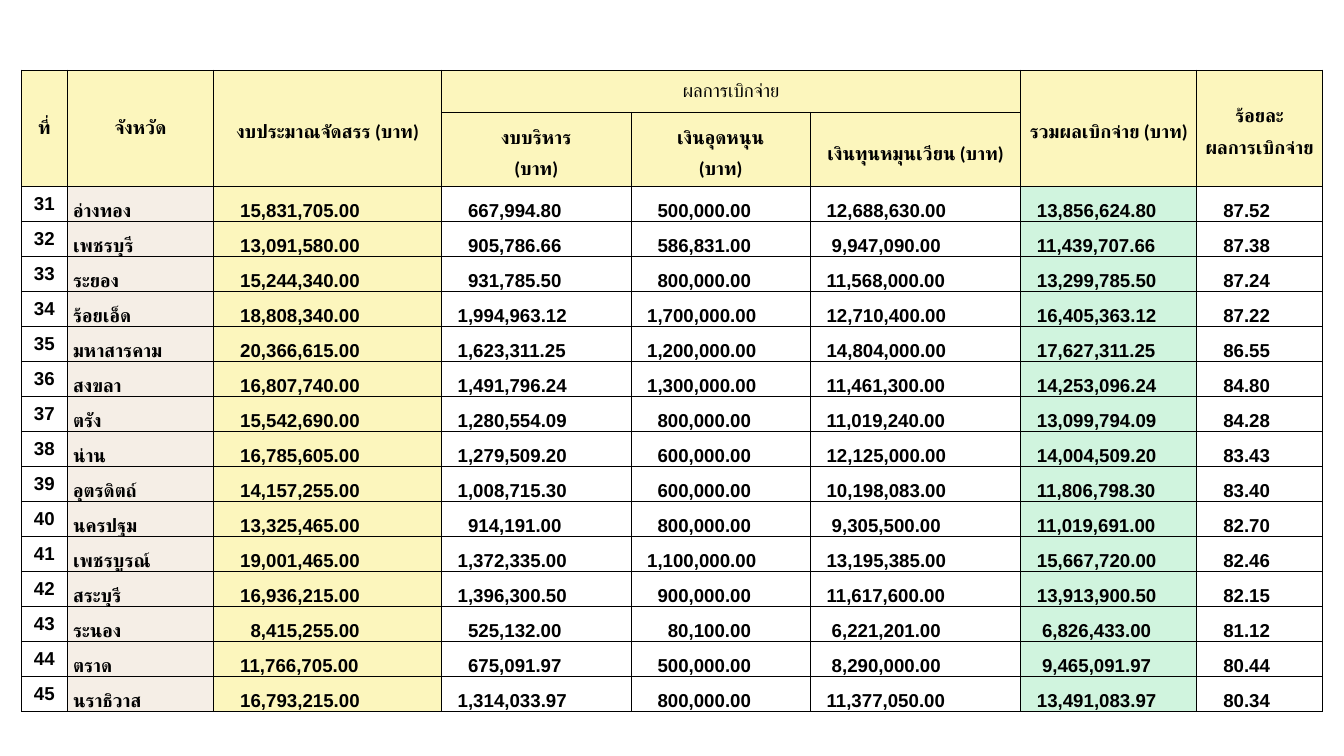
from lxml import etree
from pptx import Presentation
from pptx import util as u
from pptx.dml import color
from pptx.enum import text
from pptx.oxml import ns

INK = {"text": "000000", "line": "000000", "head": "FCF6BD", "name": "F5EEE6", "sum": "D0F4DE"}
COLS = [0.68, 2.18, 3.39, 2.82, 2.67, 3.13, 2.62, 1.87]
HEADS = [0.63, 1.1]
SPACE = 0.077
THIN = {(0, 6): "R", (1, 6): "RB", (0, 7): "L", (1, 7): "L", (2, 6): "T"}
FILLS = {1: "name", 2: "head", 6: "sum"}
GAPS = {
    2: {13: 5, 12: 7},
    3: {12: 3, 10: 5},
    4: {12: 3, 10: 5, 9: 7},
    5: {13: 3, 12: 4},
    6: {13: 3, 12: 4},
    7: {5: 5},
}
TITLES = [
    (0, 0, 1, 0, 24, True, ["ที่"]),
    (0, 1, 1, 1, 24, True, ["จังหวัด"]),
    (0, 2, 1, 2, 34, True, ["งบประมาณจัดสรร (บาท)"]),
    (0, 3, 0, 5, 24, False, ["ผลการเบิกจ่าย"]),
    (0, 6, 1, 6, 34, True, ["รวมผลเบิกจ่าย (บาท)"]),
    (0, 7, 1, 7, 34, True, ["ร้อยละ", "ผลการเบิกจ่าย"]),
    (1, 3, 1, 3, 34, True, ["งบบริหาร", "(บาท)"]),
    (1, 4, 1, 4, 34, True, ["เงินอุดหนุน", "(บาท)"]),
    (1, 5, 1, 5, 34, True, ["เงินทุนหมุนเวียน (บาท)"]),
]
FIRST = 31
DATA = [
    ("อ่างทอง", "15,831,705.00", "667,994.80", "500,000.00", "12,688,630.00", "13,856,624.80", "87.52"),
    ("เพชรบุรี", "13,091,580.00", "905,786.66", "586,831.00", "9,947,090.00", "11,439,707.66", "87.38"),
    ("ระยอง", "15,244,340.00", "931,785.50", "800,000.00", "11,568,000.00", "13,299,785.50", "87.24"),
    ("ร้อยเอ็ด", "18,808,340.00", "1,994,963.12", "1,700,000.00", "12,710,400.00", "16,405,363.12", "87.22"),
    ("มหาสารคาม", "20,366,615.00", "1,623,311.25", "1,200,000.00", "14,804,000.00", "17,627,311.25", "86.55"),
    ("สงขลา", "16,807,740.00", "1,491,796.24", "1,300,000.00", "11,461,300.00", "14,253,096.24", "84.80"),
    ("ตรัง", "15,542,690.00", "1,280,554.09", "800,000.00", "11,019,240.00", "13,099,794.09", "84.28"),
    ("น่าน", "16,785,605.00", "1,279,509.20", "600,000.00", "12,125,000.00", "14,004,509.20", "83.43"),
    ("อุตรดิตถ์", "14,157,255.00", "1,008,715.30", "600,000.00", "10,198,083.00", "11,806,798.30", "83.40"),
    ("นครปฐม", "13,325,465.00", "914,191.00", "800,000.00", "9,305,500.00", "11,019,691.00", "82.70"),
    ("เพชรบูรณ์", "19,001,465.00", "1,372,335.00", "1,100,000.00", "13,195,385.00", "15,667,720.00", "82.46"),
    ("สระบุรี", "16,936,215.00", "1,396,300.50", "900,000.00", "11,617,600.00", "13,913,900.50", "82.15"),
    ("ระนอง", "8,415,255.00", "525,132.00", "80,100.00", "6,221,201.00", "6,826,433.00", "81.12"),
    ("ตราด", "11,766,705.00", "675,091.97", "500,000.00", "8,290,000.00", "9,465,091.97", "80.44"),
    ("นราธิวาส", "16,793,215.00", "1,314,033.97", "800,000.00", "11,377,050.00", "13,491,083.97", "80.34"),
]


def apply(item, form):
    for key, value in form.items():
        setattr(item, key, value)


def rule(cell, thin):
    props = cell._tc.get_or_add_tcPr()
    for side in "LRTB":
        width = u.Pt(0.75 if side in thin else 1)
        line = etree.SubElement(props, ns.qn("a:ln" + side), w=str(int(width)))
        fill = etree.SubElement(line, ns.qn("a:solidFill"))
        etree.SubElement(fill, ns.qn("a:srgbClr"), val=INK["line"])


def paint(cell, name):
    if name:
        cell.fill.solid()
        cell.fill.fore_color.rgb = color.RGBColor.from_string(INK[name])
    else:
        cell.fill.background()


def write(cell, lines, face, form, bold=True):
    frame = cell.text_frame
    for num, line in enumerate(lines):
        para = frame.paragraphs[0] if num == 0 else frame.add_paragraph()
        apply(para, form)
        run = para.add_run()
        run.text = line
        apply(run.font, {"name": face, "size": u.Pt(20), "bold": bold})
        run.font.color.rgb = color.RGBColor.from_string(INK["text"])
        etree.SubElement(run.font._element, ns.qn("a:cs"), typeface=face)


def inset(cell, left, top, right, low, anchor):
    apply(cell, {
        "margin_left": u.Inches(left), "margin_top": u.Inches(top),
        "margin_right": u.Inches(right), "margin_bottom": u.Inches(low),
        "vertical_anchor": anchor,
    })


def head(grid):
    for top, left, low, right, lead, bold, lines in TITLES:
        cell = grid.cell(top, left)
        if (top, left) != (low, right):
            cell.merge(grid.cell(low, right))
        inset(cell, 0.05, 0.05, 0.05, 0.05, text.MSO_ANCHOR.MIDDLE)
        form = {"alignment": text.PP_ALIGN.CENTER, "line_spacing": u.Pt(lead)}
        write(cell, lines, "Calibri", form, bold)


def body(grid):
    for row, items in enumerate(DATA):
        for col, word in enumerate((str(FIRST + row), *items)):
            cell = grid.cell(row + len(HEADS), col)
            gap = GAPS[col][len(word)] if col in GAPS else col
            anchor = text.MSO_ANCHOR.BOTTOM if col else text.MSO_ANCHOR.MIDDLE
            align = text.PP_ALIGN.LEFT if col else text.PP_ALIGN.CENTER
            inset(cell, 0.01 + gap * SPACE, 0.01, 0.01, 0, anchor)
            write(cell, [word], "Arial", {"alignment": align})


def budget(slide, left, top, width, height):
    count = len(HEADS) + len(DATA)
    box = [u.Inches(n) for n in (left, top, width, height)]
    grid = slide.shapes.add_table(count, len(COLS), *box).table
    apply(grid, {"first_row": False, "horz_banding": False})
    for col, part in zip(grid.columns, COLS):
        col.width = u.Inches(width * part / sum(COLS))
    step = (height - sum(HEADS)) / len(DATA)
    for row, tall in zip(grid.rows, HEADS + [step] * len(DATA)):
        row.height = u.Inches(tall)
    for row in range(count):
        for col in range(len(COLS)):
            cell = grid.cell(row, col)
            rule(cell, THIN.get((row, col), ""))
            paint(cell, "head" if row < len(HEADS) else FILLS.get(col))
    head(grid)
    body(grid)


def main():
    deck = Presentation()
    apply(deck, {"slide_width": u.Inches(20), "slide_height": u.Inches(11.25)})
    slide = deck.slides.add_slide(deck.slide_layouts[6])
    budget(slide, 0.32, 1.04, 19.36, 9.55)
    deck.save("out.pptx")


if __name__ == "__main__":
    main()
